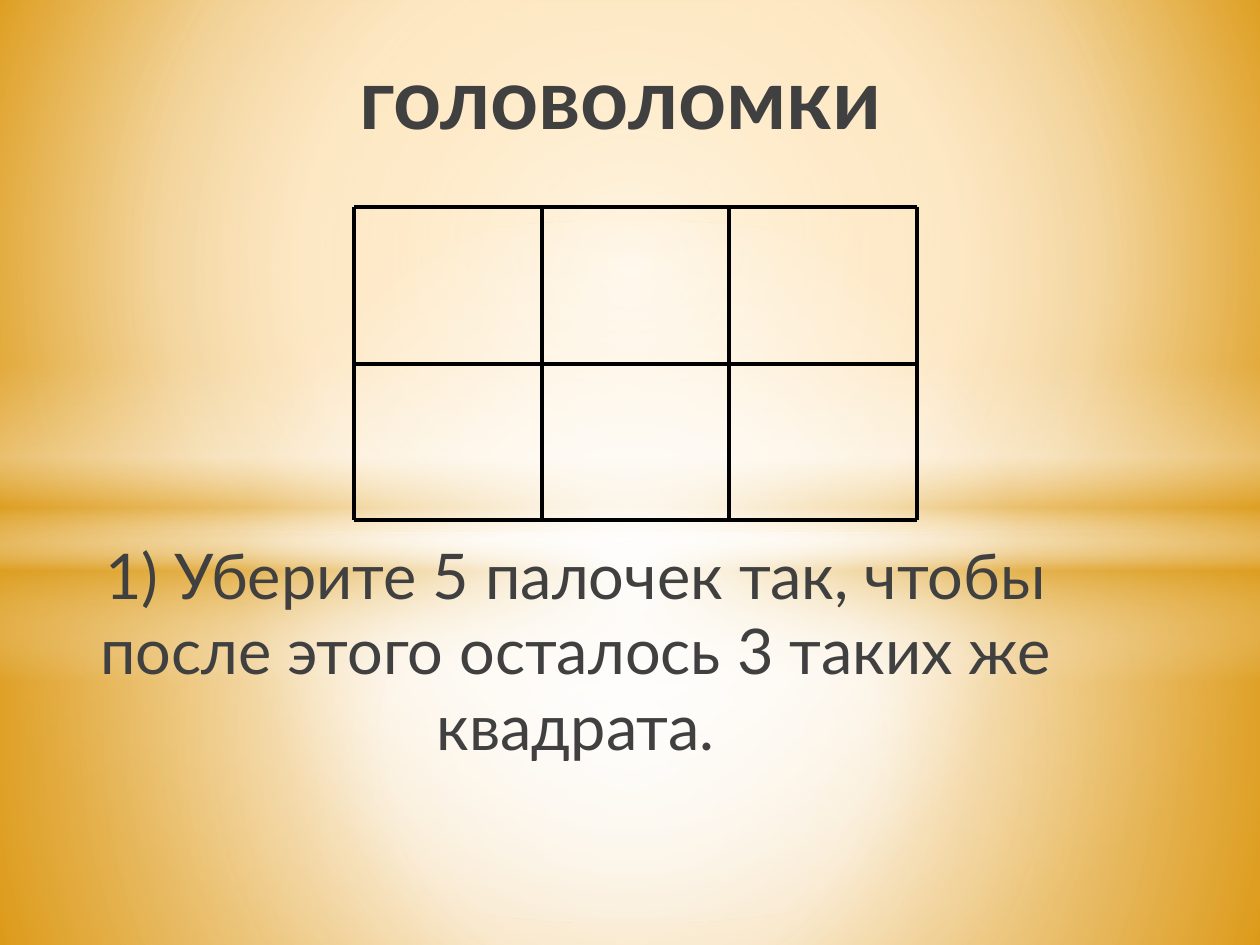
from lxml import etree
from pptx import Presentation
from pptx.dml.color import RGBColor
from pptx.enum import shapes, text
from pptx.oxml import ns
from pptx.util import Cm, Pt

WHITE = RGBColor(0xFF, 0xFF, 0xFF)
GOLD = RGBColor(0xDC, 0x9E, 0x1F)
AMBER = RGBColor(0xFF, 0xA6, 0x07)
SAND = RGBColor(0xF9, 0xCD, 0x88)
OCHRE = RGBColor(0xE0, 0x8E, 0x02)
BLACK = RGBColor(0, 0, 0)
GREY = RGBColor(0x40, 0x40, 0x40)
FONT = "Lato"
WIDE, HIGH = 25.4, 19.05
CENTRE = (50, 50, 50, 50)
COLS, ROWS = 3, 2
LEFT, TOP, CELL_W, CELL_H = 7.14, 4.17, 3.78, 3.16


def blend(owner, fill, stops, focus=None):
    """Fill with (position, colour, opacity) stops, round a focus or downwards."""
    fill.solid()
    solid = owner.xpath(".//a:solidFill")[0]
    grad = etree.Element(ns.qn("a:gradFill"), rotWithShape="1")
    group = etree.SubElement(grad, ns.qn("a:gsLst"))
    for pos, colour, alpha in stops:
        stop = etree.SubElement(group, ns.qn("a:gs"), pos=str(pos * 1000))
        tint = etree.SubElement(stop, ns.qn("a:srgbClr"), val=str(colour))
        if alpha < 100:
            etree.SubElement(tint, ns.qn("a:alpha"), val=str(alpha * 1000))
    if focus:
        way = etree.SubElement(grad, ns.qn("a:path"), path="circle")
        sides = {side: str(n * 1000) for side, n in zip("ltrb", focus)}
        etree.SubElement(way, ns.qn("a:fillToRect"), **sides)
    else:
        etree.SubElement(grad, ns.qn("a:lin"), ang="5400000", scaled="0")
    solid.getparent().replace(solid, grad)


def add_glow(slide, kind, top, height, stops, focus=None):
    """Add a full-width soft band of light."""
    glow = slide.shapes.add_shape(kind, 0, Cm(top), Cm(WIDE), Cm(height))
    glow.shadow.inherit = False
    glow.line.fill.background()
    blend(glow.element.spPr, glow.fill, stops, focus)


def add_text(slide, words, left, top, width, height, size, bold=False):
    box = slide.shapes.add_textbox(Cm(left), Cm(top), Cm(width), Cm(height))
    frame = box.text_frame
    frame.word_wrap = True
    frame.vertical_anchor = text.MSO_ANCHOR.BOTTOM
    frame.text = words
    para = frame.paragraphs[0]
    para.alignment = text.PP_ALIGN.CENTER
    font = para.runs[0].font
    font.name, font.size, font.bold = FONT, Pt(size), bold
    font.color.rgb = GREY


def add_stick(slide, col, row, across, down):
    """Lay one stick from a grid corner, going across or down by one cell."""
    x, y = LEFT + col * CELL_W, TOP + row * CELL_H
    stick = slide.shapes.add_connector(
        shapes.MSO_CONNECTOR.STRAIGHT, Cm(x), Cm(y),
        Cm(x + across * CELL_W), Cm(y + down * CELL_H))
    stick.line.color.rgb = BLACK
    stick.line.width = Pt(2.25)
    etree.SubElement(stick.element.spPr, ns.qn("a:effectLst"))


def add_grid(slide):
    for row in range(ROWS + 1):
        for col in range(COLS):
            add_stick(slide, col, row, 1, 0)
    for row in range(ROWS):
        for col in range(COLS + 1):
            add_stick(slide, col, row, 0, 1)


def add_back(slide):
    blend_stops = [(0, AMBER, 100), (60, SAND, 100), (100, OCHRE, 100)]
    back = slide.background.fill
    blend(slide.element, back, blend_stops, (20, 10, 20, 60))
    rect, oval = shapes.MSO_SHAPE.RECTANGLE, shapes.MSO_SHAPE.OVAL
    add_glow(slide, rect, 10.74, HIGH - 10.74,
             [(0, WHITE, 92), (37, WHITE, 77), (100, GOLD, 80)], CENTRE)
    add_glow(slide, rect, 0, 10.74,
             [(0, WHITE, 90), (48, WHITE, 63), (100, GOLD, 80)], CENTRE)
    add_glow(slide, rect, 7.37, 6.35,
             [(0, WHITE, 0), (29, WHITE, 30), (45, GOLD, 40),
              (55, WHITE, 26), (65, GOLD, 60), (100, WHITE, 0)])
    add_glow(slide, oval, 4.45, 14.17,
             [(0, WHITE, 100), (54, WHITE, 0)], CENTRE)


def main():
    deck = Presentation()
    deck.slide_width, deck.slide_height = Cm(WIDE), Cm(HIGH)
    slide = deck.slides.add_slide(deck.slide_layouts[6])
    add_back(slide)
    add_text(slide, "1) Уберите 5 палочек так, чтобы после этого осталось "
             "3 таких же квадрата.", 0.71, 2.51, 21.79, 13, 36)
    add_text(slide, "головоломки", 3.07, 0.74, 18.87, 2.34, 48, True)
    add_grid(slide)
    deck.save("out.pptx")


if __name__ == "__main__":
    main()
